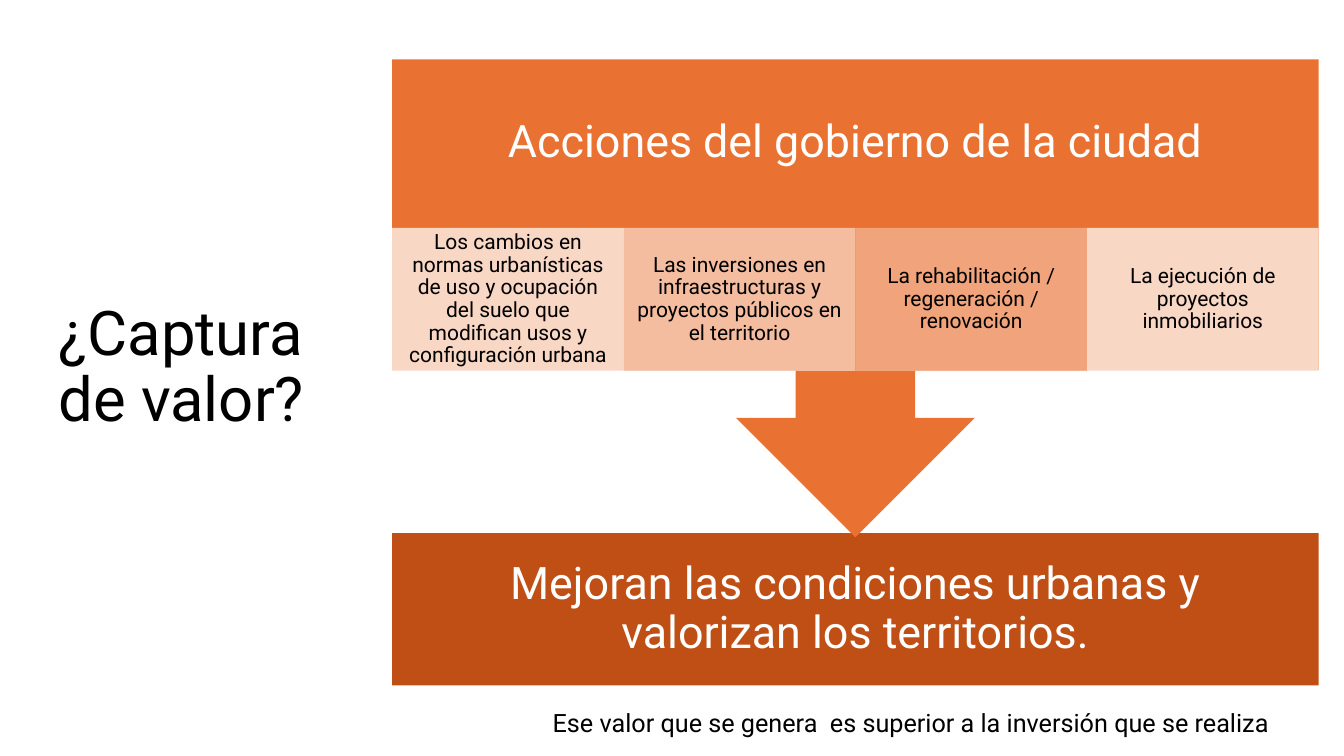
from dataclasses import dataclass

from lxml import etree
from pptx import Presentation
from pptx.dml.color import RGBColor
from pptx.enum.shapes import MSO_SHAPE
from pptx.enum.text import MSO_ANCHOR, MSO_AUTO_SIZE, PP_ALIGN
from pptx.oxml.ns import qn
from pptx.shapes.autoshape import Shape
from pptx.slide import Slide
from pptx.util import Inches, Pt

RECT = MSO_SHAPE.RECTANGLE
CALLOUT = MSO_SHAPE.DOWN_ARROW_CALLOUT
LEFT, CENTER = PP_ALIGN.LEFT, PP_ALIGN.CENTER
MIDDLE, TOP = MSO_ANCHOR.MIDDLE, MSO_ANCHOR.TOP
FIXED = MSO_AUTO_SIZE.NONE

WIDTH, HEIGHT = Inches(13.33), Inches(7.5)
TITLE_ONLY = 5
FONT = "Roboto"
COLORS = {
    "white": "FFFFFF",
    "black": "000000",
    "orange": "E97132",
    "rust": "C04F15",
    "pale": "FBE3D6",
    "peach": "F6C6AD",
    "salmon": "F2AA84",
}


@dataclass(frozen=True)
class Box:
    """Position and size in percent of the slide."""

    x: float
    y: float
    w: float
    h: float


@dataclass(frozen=True)
class Style:
    size: int
    color: str = "black"
    align: PP_ALIGN = CENTER
    anchor: MSO_ANCHOR = MIDDLE
    inset: tuple[float, float] = (0.1, 0.05)
    lead: float = 0.9


@dataclass(frozen=True)
class Action:
    text: str
    color: str


FLOW_X, FLOW_W = 29.18, 68.94
HEAD = Box(FLOW_X, 7.87, FLOW_W, 22.13)
ARROW = Box(FLOW_X, 7.87, FLOW_W, 63.2)
RESULT = Box(FLOW_X, 70.53, FLOW_W, 20.13)
TITLE = Box(3.6, 8.13, 22.36, 81.2)
NOTE = Box(38.26, 92.93, 59.04, 5.33)
ROW_Y, ROW_H = 30.13, 18.93

BANNER = Style(32, "white", inset=(0.25, 0.25))
DETAIL = Style(15, inset=(0.12, 0.02))
HEADING = Style(44, align=LEFT)
REMARK = Style(18, anchor=TOP, lead=1.0)

ACTIONS = [
    Action("Los cambios en normas urbanísticas de uso y ocupación del suelo "
           "que modifican usos y configuración urbana", "pale"),
    Action("Las inversiones en infraestructuras y proyectos públicos "
           "en el territorio", "peach"),
    Action("La rehabilitación / regeneración / renovación", "salmon"),
    Action("La ejecución de proyectos inmobiliarios", "pale"),
]


def place(box: Box) -> tuple[int, int, int, int]:
    return (round(WIDTH * box.x / 100), round(HEIGHT * box.y / 100),
            round(WIDTH * box.w / 100), round(HEIGHT * box.h / 100))


def write(shape: Shape, text: str, style: Style) -> None:
    frame = shape.text_frame
    frame.text = text
    frame.word_wrap = True
    frame.auto_size = FIXED
    frame.vertical_anchor = style.anchor
    side, edge = style.inset
    frame.margin_left = frame.margin_right = Inches(side)
    frame.margin_top = frame.margin_bottom = Inches(edge)
    for para in frame.paragraphs:
        para.alignment = style.align
        para.line_spacing = style.lead
        for run in para.runs:
            run.font.name = FONT
            run.font.size = Pt(style.size)
            run.font.color.rgb = RGBColor.from_string(COLORS[style.color])


def draw(slide: Slide, kind: MSO_SHAPE, box: Box, color: str,
         alpha: int = 100) -> Shape:
    shape = slide.shapes.add_shape(kind, *place(box))
    shape.shadow.inherit = False
    shape.line.fill.background()
    shape.fill.solid()
    shape.fill.fore_color.rgb = RGBColor.from_string(COLORS[color])
    if alpha < 100:
        tone = shape.fill._xPr.find(qn("a:solidFill"))[0]
        etree.SubElement(tone, qn("a:alpha"), val=str(alpha * 1000))
    return shape


def label(slide: Slide, box: Box, text: str, style: Style) -> None:
    write(slide.shapes.add_textbox(*place(box)), text, style)


def main() -> None:
    deck = Presentation()
    deck.slide_width, deck.slide_height = WIDTH, HEIGHT
    slide = deck.slides.add_slide(deck.slide_layouts[TITLE_ONLY])

    title = slide.shapes.title
    title.left, title.top, title.width, title.height = place(TITLE)
    write(title, "¿Captura de valor?", HEADING)

    result = draw(slide, RECT, RESULT, "rust")
    write(result, "Mejoran las condiciones urbanas y valorizan los territorios.",
          BANNER)
    draw(slide, CALLOUT, ARROW, "orange")
    label(slide, HEAD, "Acciones del gobierno de la ciudad", BANNER)

    step = FLOW_W / len(ACTIONS)
    for col, action in enumerate(ACTIONS):
        cell = Box(FLOW_X + col * step, ROW_Y, step, ROW_H)
        write(draw(slide, RECT, cell, action.color, 90), action.text, DETAIL)

    label(slide, NOTE,
          "Ese valor que se genera  es superior a la inversión que se realiza",
          REMARK)
    deck.save("out.pptx")


if __name__ == "__main__":
    main()
